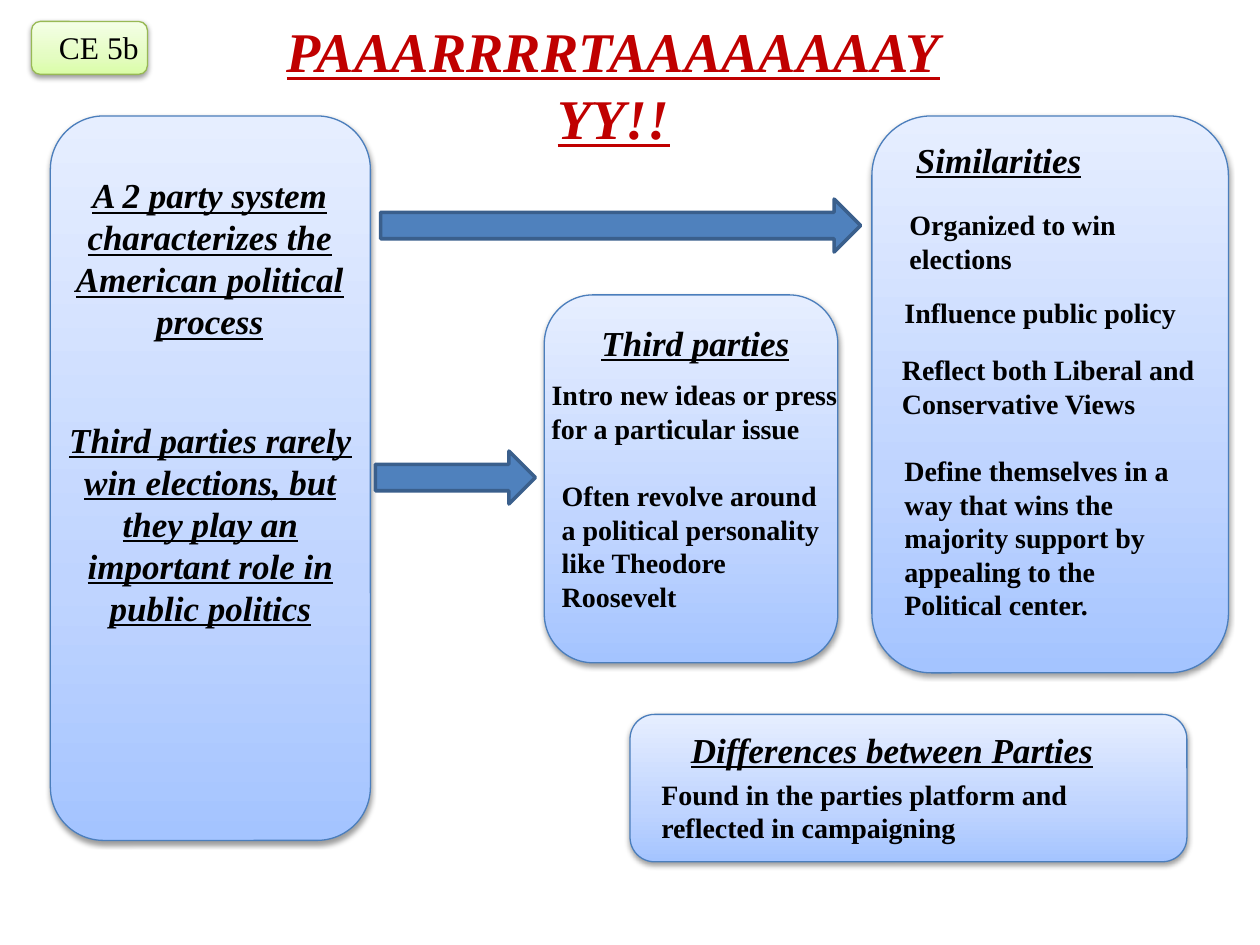
from dataclasses import dataclass

from pptx import Presentation
from pptx.dml.color import RGBColor
from pptx.enum.shapes import MSO_SHAPE as Shape
from pptx.enum.text import MSO_ANCHOR as Anchor, MSO_AUTO_SIZE as AutoSize, PP_ALIGN as Align
from pptx.oxml import parse_xml
from pptx.oxml.ns import nsdecls, qn
from pptx.util import Inches, Pt

Gradient = tuple[tuple[int, str], ...]


@dataclass(frozen=True)
class TextStyle:
    size: int
    color: str = "000000"
    bold: bool = True
    emphasis: bool = False  # italic and underlined


@dataclass(frozen=True)
class Theme:
    font: str = "Times New Roman"
    title: TextStyle = TextStyle(32, "C00000", emphasis=True)
    heading: TextStyle = TextStyle(20, emphasis=True)
    body: TextStyle = TextStyle(16)
    tag: TextStyle = TextStyle(18, bold=False)
    blue: Gradient = ((0, "A4C4FF"), (35, "BFD4FF"), (100, "E6EEFF"))
    blue_line: str = "4B7EBC"
    green: Gradient = ((0, "DAFDA7"), (35, "E4FCC2"), (100, "F5FFE7"))
    green_line: str = "98B955"
    arrow: str = "4F81BD"
    arrow_line: str = "3A5F8C"


THEME = Theme()


@dataclass(frozen=True)
class Box:
    left: float
    top: float
    width: float
    height: float

    def emu(self) -> tuple:
        return tuple(map(Inches, (self.left, self.top, self.width, self.height)))


@dataclass(frozen=True)
class Panel:
    box: Box
    gradient: Gradient = THEME.blue
    line: str = THEME.blue_line


@dataclass(frozen=True)
class Label:
    box: Box
    text: str
    style: TextStyle = THEME.body
    align: Align = Align.LEFT


PANELS = (
    Panel(Box(0.4, 0.92, 2.54, 5.75)),
    Panel(Box(6.92, 0.92, 2.83, 4.42)),
    Panel(Box(4.32, 2.34, 2.33, 2.92)),
    Panel(Box(5, 5.67, 4.42, 1.17)),
    Panel(Box(0.25, 0.17, 0.92, 0.42), THEME.green, THEME.green_line),
)

ARROWS = (Box(3.02, 1.58, 3.81, 0.42), Box(2.98, 3.58, 1.27, 0.42))

TITLE = Label(Box(2.08, 0.08, 5.58, 0.64), "PAAARRRRTAAAAAAAAYYY!!", THEME.title, Align.CENTER)

LABELS = (
    Label(Box(0.37, 0.17, 1.27, 0.4), "CE 5b", THEME.tag),
    Label(Box(0.5, 1.33, 2.33, 1.45),
          "A 2 party system characterizes the American political process",
          THEME.heading, Align.CENTER),
    Label(Box(0.4, 3.27, 2.54, 1.78),
          "Third parties rarely win elections, but they play an important role in public politics",
          THEME.heading, Align.CENTER),
    Label(Box(7.17, 1.05, 2.08, 0.44), "Similarities", THEME.heading),
    Label(Box(7.12, 1.6, 2.54, 0.64), "Organized to win elections"),
    Label(Box(7.08, 2.3, 2.54, 0.37), "Influence public policy"),
    Label(Box(7.06, 2.75, 2.54, 0.64), "Reflect both Liberal and Conservative Views"),
    Label(Box(7.08, 3.55, 2.54, 1.45),
          "Define themselves in a way that wins the majority support by appealing to the "
          "Political center."),
    Label(Box(4.25, 2.5, 2.54, 0.44), "Third parties", THEME.heading, Align.CENTER),
    Label(Box(4.28, 2.95, 2.54, 0.64), "Intro new ideas or press for a particular issue"),
    Label(Box(4.36, 3.75, 2.29, 1.18),
          "Often revolve around a political personality like Theodore Roosevelt"),
    Label(Box(5.31, 5.73, 3.54, 0.44), "Differences between Parties", THEME.heading, Align.CENTER),
    Label(Box(5.15, 6.12, 4.1, 0.64),
          "Found in the parties platform and reflected in campaigning"),
)


def rgb(color: str) -> RGBColor:
    return RGBColor.from_string(color)


def set_gradient(sp, gradient: Gradient) -> None:
    """Fill with any number of stops, running from bottom to top."""
    sp.fill.gradient()
    stops = "".join(f'<a:gs pos="{pos * 1000}"><a:srgbClr val="{color}"/></a:gs>'
                    for pos, color in gradient)
    props = sp.element.spPr
    props.replace(props.find(qn("a:gradFill")), parse_xml(
        f'<a:gradFill {nsdecls("a")} rotWithShape="1"><a:gsLst>{stops}</a:gsLst>'
        '<a:lin ang="16200000" scaled="0"/></a:gradFill>'))


def add_shadow(sp) -> None:
    sp.element.spPr.find(qn("a:effectLst")).append(parse_xml(
        f'<a:outerShdw {nsdecls("a")} blurRad="{Pt(3.15)}" dist="{Pt(1.57)}" dir="5400000" '
        'rotWithShape="0"><a:srgbClr val="000000"><a:alpha val="38000"/></a:srgbClr>'
        '</a:outerShdw>'))


def add_outlined(slide, kind: Shape, box: Box, line: str, width: float):
    sp = slide.shapes.add_shape(kind, *box.emu())
    sp.shadow.inherit = False
    sp.line.color.rgb = rgb(line)
    sp.line.width = Pt(width)
    return sp


def add_panel(slide, panel: Panel) -> None:
    sp = add_outlined(slide, Shape.ROUNDED_RECTANGLE, panel.box, panel.line, 0.75)
    set_gradient(sp, panel.gradient)
    add_shadow(sp)


def add_arrow(slide, box: Box) -> None:
    sp = add_outlined(slide, Shape.RIGHT_ARROW, box, THEME.arrow_line, 2)
    sp.fill.solid()
    sp.fill.fore_color.rgb = rgb(THEME.arrow)


def write_label(sp, label: Label, auto_size: AutoSize) -> None:
    tf = sp.text_frame
    tf.word_wrap = True
    tf.auto_size = auto_size
    tf.vertical_anchor = Anchor.TOP
    p = tf.paragraphs[0]
    p.alignment = label.align
    r = p.add_run()
    r.text = label.text
    style = label.style
    r.font.name = THEME.font
    r.font.size = Pt(style.size)
    r.font.bold = style.bold
    r.font.italic = r.font.underline = style.emphasis
    r.font.color.rgb = rgb(style.color)


def add_title(slide, label: Label) -> None:
    sp = slide.shapes.title
    sp.left, sp.top, sp.width, sp.height = label.box.emu()
    write_label(sp, label, AutoSize.NONE)


def add_label(slide, label: Label) -> None:
    write_label(slide.shapes.add_textbox(*label.box.emu()), label, AutoSize.SHAPE_TO_FIT_TEXT)


def main() -> None:
    prs = Presentation()
    prs.slide_width, prs.slide_height = Inches(10), Inches(7.5)
    s = prs.slides.add_slide(prs.slide_layouts.get_by_name("Title Only"))
    add_title(s, TITLE)
    for panel in PANELS:
        add_panel(s, panel)
    for arrow in ARROWS:
        add_arrow(s, arrow)
    for label in LABELS:
        add_label(s, label)
    prs.save("out.pptx")


if __name__ == "__main__":
    main()
